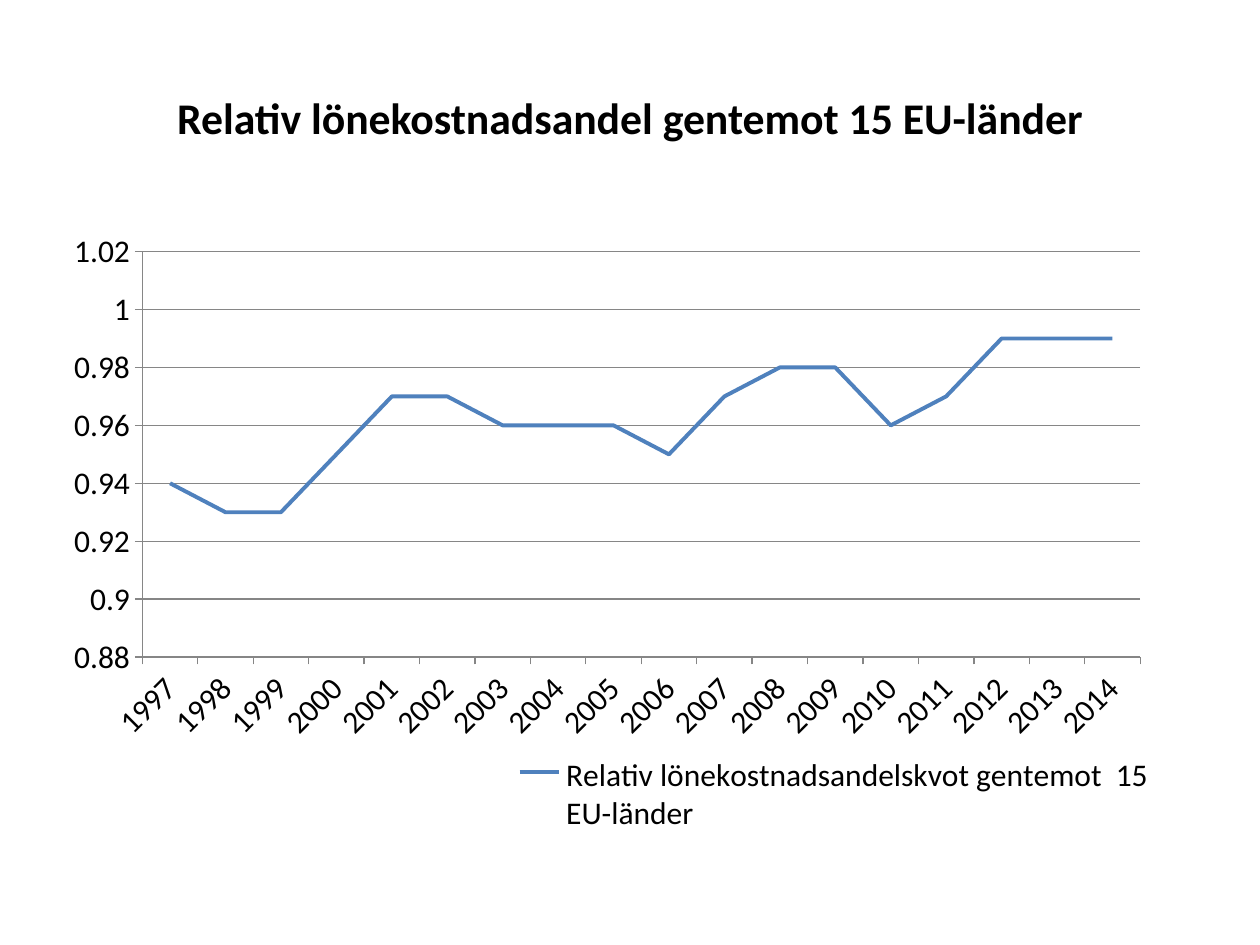
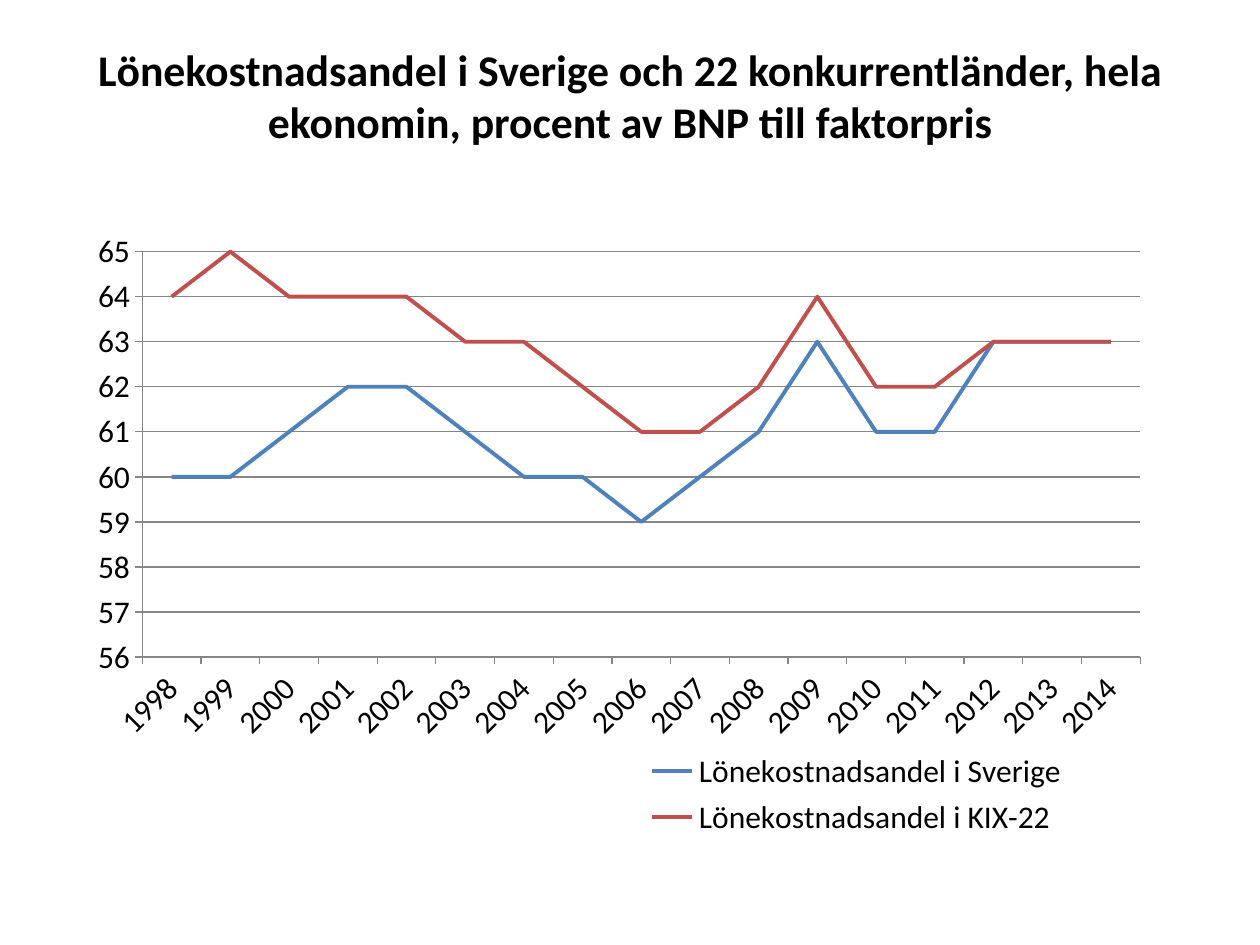
from dataclasses import dataclass

from lxml.etree import SubElement
from pptx import Presentation
from pptx.chart.chart import Chart
from pptx.chart.data import CategoryChartData
from pptx.dml.color import RGBColor
from pptx.enum.chart import XL_CHART_TYPE, XL_LEGEND_POSITION, XL_TICK_MARK
from pptx.enum.text import MSO_ANCHOR, MSO_AUTO_SIZE, PP_ALIGN
from pptx.oxml.ns import qn
from pptx.oxml.xmlchemy import BaseOxmlElement
from pptx.presentation import Presentation as Deck
from pptx.slide import Slide
from pptx.util import Inches, Pt

# Shared style
COLORS = {"text": "000000", "grid": "868686", "blue": "4F81BD", "red": "C0504D"}
FONT = "Calibri"
TITLE_ONLY = 5
CHART_BOX = (Inches(0.5), Inches(1.75), Inches(9), Inches(4.95))


@dataclass(frozen=True)
class Area:
    """Share of the chart taken by a part of it."""
    x: float
    y: float
    w: float
    h: float


PLOT_AREA = Area(0.07, 0.05, 0.88, 0.65)


@dataclass(frozen=True)
class Line:
    name: str
    color: str
    values: tuple[float, ...]


@dataclass(frozen=True)
class Scale:
    minimum: float
    maximum: float
    step: float


@dataclass(frozen=True)
class ChartSlide:
    title: str
    title_left: float
    title_height: float
    title_bottom_inset: float
    first_year: int
    scale: Scale
    legend_area: Area
    lines: tuple[Line, ...]


# Content
SLIDES = (
    ChartSlide(
        title="Relativ lönekostnadsandel gentemot 15 EU-länder",
        title_left=0.5, title_height=1.25, title_bottom_inset=0.05,
        first_year=1997,
        scale=Scale(0.88, 1.02, 0.02),
        legend_area=Area(0.4, 0.84, 0.56, 0.16),
        lines=(
            Line("Relativ lönekostnadsandelskvot gentemot  15 EU-länder", "blue",
                 (0.94, 0.93, 0.93, 0.95, 0.97, 0.97, 0.96, 0.96, 0.96,
                  0.95, 0.97, 0.98, 0.98, 0.96, 0.97, 0.99, 0.99, 0.99)),
        ),
    ),
    ChartSlide(
        title="Lönekostnadsandel i Sverige och 22 konkurrentländer, hela "
              "ekonomin, procent av BNP till faktorpris",
        title_left=0.17, title_height=1.28, title_bottom_inset=0.42,
        first_year=1998,
        scale=Scale(56, 65, 1),
        legend_area=Area(0.49, 0.84, 0.42, 0.16),
        lines=(
            Line("Lönekostnadsandel i Sverige", "blue",
                 (60, 60, 61, 62, 62, 61, 60, 60, 59,
                  60, 61, 63, 61, 61, 63, 63, 63)),
            Line("Lönekostnadsandel i KIX-22", "red",
                 (64, 65, 64, 64, 64, 63, 63, 62, 61,
                  61, 62, 64, 62, 62, 63, 63, 63)),
        ),
    ),
)


def color(name: str) -> RGBColor:
    return RGBColor.from_string(COLORS[name])


def place(part: BaseOxmlElement, index: int, area: Area, inner: bool = False) -> None:
    """Give a chart part a fixed place."""
    for old_layout in part.findall(qn("c:layout")):
        part.remove(old_layout)
    layout = SubElement(part, qn("c:layout"))
    part.insert(index, layout)
    manual = SubElement(layout, qn("c:manualLayout"))
    settings = {"layoutTarget": "inner"} if inner else {}
    settings |= {"xMode": "edge", "yMode": "edge"}
    settings |= {"x": area.x, "y": area.y, "w": area.w, "h": area.h}
    for tag, value in settings.items():
        SubElement(manual, qn(f"c:{tag}")).set("val", str(value))


def add_title(slide: Slide, content: ChartSlide) -> None:
    title = slide.shapes.title
    title.left, title.top = Inches(content.title_left), Inches(0.3)
    title.width = Inches(10 - 2 * content.title_left)
    title.height = Inches(content.title_height)
    frame = title.text_frame
    frame.word_wrap = True
    frame.auto_size = MSO_AUTO_SIZE.NONE
    frame.vertical_anchor = MSO_ANCHOR.MIDDLE
    frame.margin_bottom = Inches(content.title_bottom_inset)
    paragraph = frame.paragraphs[0]
    paragraph.alignment = PP_ALIGN.CENTER
    run = paragraph.add_run()
    run.text = content.title
    run.font.name, run.font.size, run.font.bold = FONT, Pt(25), True
    run.font.color.rgb = color("text")


def style_axes(chart: Chart, scale: Scale) -> None:
    value_axis = chart.value_axis
    value_axis.minimum_scale = scale.minimum
    value_axis.maximum_scale = scale.maximum
    value_axis.major_unit = scale.step
    value_axis.has_major_gridlines = True
    value_axis.tick_labels.number_format = "General"
    value_axis.tick_labels.number_format_is_linked = False
    for axis in (value_axis, chart.category_axis):
        axis.major_tick_mark = XL_TICK_MARK.OUTSIDE
        axis.minor_tick_mark = XL_TICK_MARK.NONE
        axis.tick_labels.font.size = Pt(18)
    for line in (value_axis.format.line, chart.category_axis.format.line,
                 value_axis.major_gridlines.format.line):
        line.color.rgb = color("grid")
        line.width = Pt(0.75)
    # Slanted year labels
    for body in chart.element.xpath(".//c:catAx/c:txPr/a:bodyPr"):
        body.set("rot", "-2700000")
        body.set("vert", "horz")


def add_line_chart(slide: Slide, content: ChartSlide) -> None:
    data = CategoryChartData()
    year_count = len(content.lines[0].values)
    data.categories = [str(content.first_year + i) for i in range(year_count)]
    for line in content.lines:
        data.add_series(line.name, line.values)
    chart = slide.shapes.add_chart(XL_CHART_TYPE.LINE, *CHART_BOX, data).chart
    chart.has_title = False
    chart.font.name, chart.font.size = FONT, Pt(18)
    chart.font.color.rgb = color("text")
    plot = chart.plots[0]
    plot.vary_by_categories = False
    for series, line in zip(plot.series, content.lines):
        series.smooth = False
        series.format.line.color.rgb = color(line.color)
        series.format.line.width = Pt(2.25)
    style_axes(chart, content.scale)

    # Legend and plot area
    chart.has_legend = True
    chart.legend.position = XL_LEGEND_POSITION.RIGHT
    chart.legend.include_in_layout = False
    chart.legend.font.size = Pt(18)
    place(chart.element.xpath("c:chart/c:plotArea")[0], 0, PLOT_AREA, inner=True)
    place(chart.element.xpath("c:chart/c:legend")[0], 1, content.legend_area)


def add_chart_slide(presentation: Deck, content: ChartSlide) -> None:
    slide = presentation.slides.add_slide(presentation.slide_layouts[TITLE_ONLY])
    add_title(slide, content)
    add_line_chart(slide, content)


def main() -> None:
    presentation = Presentation()
    presentation.slide_width, presentation.slide_height = Inches(10), Inches(7.5)
    for content in SLIDES:
        add_chart_slide(presentation, content)
    presentation.save("out.pptx")


if __name__ == "__main__":
    main()
